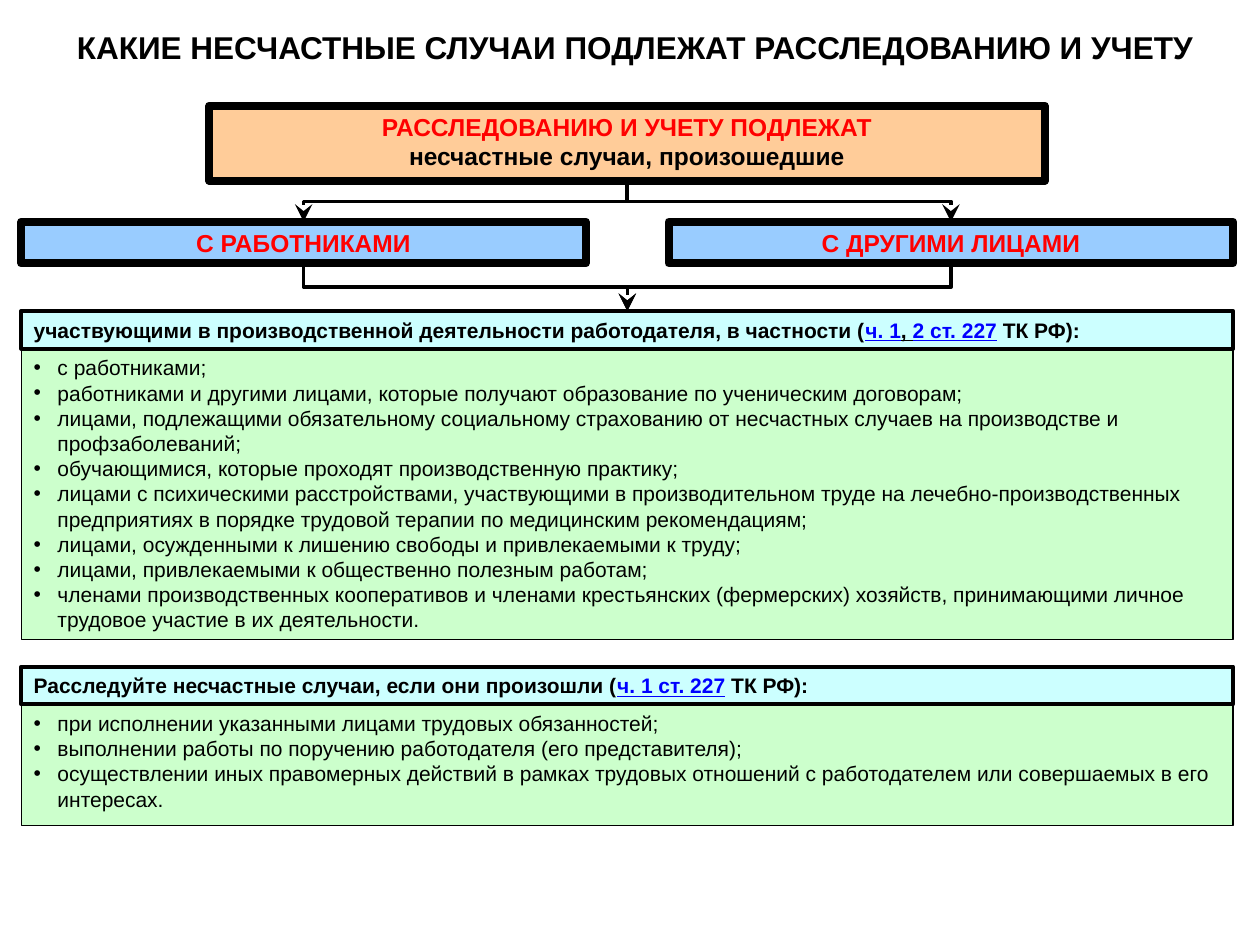
"""Builds a slide on which workplace accidents must be investigated and recorded."""
from lxml.etree import SubElement
from pptx import Presentation
from pptx.dml.color import RGBColor
from pptx.enum.shapes import MSO_CONNECTOR, MSO_SHAPE
from pptx.enum.text import MSO_ANCHOR, PP_ALIGN
from pptx.oxml.ns import qn
from pptx.util import Cm, Pt

COLORS = {
    "black": "000000", "red": "FF0000", "link": "0000FF",
    "orange": "FFCC99", "blue": "99CCFF", "cyan": "CCFFFF", "green": "CCFFCC",
}
TITLE = "КАКИЕ НЕСЧАСТНЫЕ СЛУЧАИ ПОДЛЕЖАТ РАССЛЕДОВАНИЮ И УЧЕТУ"
SUBJECT = [
    [("РАССЛЕДОВАНИЮ И УЧЕТУ ПОДЛЕЖАТ", "red")],
    [("несчастные случаи, произошедшие", "black")],
]
GROUPS = ["С РАБОТНИКАМИ", "С ДРУГИМИ ЛИЦАМИ"]
PANELS = [
    {
        "top": 6.27, "body_height": 5.87,
        "heading": [
            ("участвующими в производственной деятельности работодателя, в частности (", "black"),
            ("ч. 1", "link"), (", ", "underlined"), ("2 ст. 227", "link"), (" ТК РФ):", "black"),
        ],
        "items": [
            "с работниками;",
            "работниками и другими лицами, которые получают образование по ученическим договорам;",
            "лицами, подлежащими обязательному социальному страхованию от несчастных случаев на производстве и профзаболеваний;",
            "обучающимися, которые проходят производственную практику;",
            "лицами с психическими расстройствами, участвующими в производительном труде на лечебно-производственных предприятиях в порядке трудовой терапии по медицинским рекомендациям;",
            "лицами, осужденными к лишению свободы и привлекаемыми к труду;",
            "лицами, привлекаемыми к общественно полезным работам;",
            "членами производственных кооперативов и членами крестьянских (фермерских) хозяйств, принимающими личное трудовое участие в их деятельности.",
        ],
    },
    {
        "top": 13.44, "body_height": 2.44,
        "heading": [
            ("Расследуйте несчастные случаи, если они произошли (", "black"),
            ("ч. 1 ст. 227", "link"), (" ТК РФ):", "black"),
        ],
        "items": [
            "при исполнении указанными лицами трудовых обязанностей;",
            "выполнении работы по поручению работодателя (его представителя);",
            "осуществлении иных правомерных действий в рамках трудовых отношений с работодателем или совершаемых в его интересах.",
        ],
    },
]
LEFT, WIDTH, HEADING_HEIGHT = 0.43, 24.43, 0.76
GROUP_WIDTH, GROUP_TOP, GROUP_HEIGHT = 11.38, 4.47, 0.84
INDENT = Cm(0.48)


def color(name):
    return RGBColor.from_string(COLORS[name])


def write_text(shape, paragraphs, size=12, bold=False, align=PP_ALIGN.LEFT, bullet=None, wrap=True):
    frame = shape.text_frame
    frame.word_wrap = wrap
    frame.vertical_anchor = MSO_ANCHOR.TOP
    for index, parts in enumerate(paragraphs):
        paragraph = frame.add_paragraph() if index else frame.paragraphs[0]
        paragraph.alignment = align
        if bullet:
            properties = paragraph._p.get_or_add_pPr()
            properties.set("marL", str(INDENT))
            properties.set("indent", str(-INDENT))
            SubElement(properties, qn("a:buFont"), typeface="Arial")
            SubElement(properties, qn("a:buChar"), char=bullet)
        for text, style in parts:
            run = paragraph.add_run()
            run.text = text
            font = run.font
            font.name, font.size, font.bold = "Arial", Pt(size), bold
            font.underline = style in ("link", "underlined")
            font.color.rgb = color("black" if style == "underlined" else style)


def add_box(slide, left, top, width, height, fill, line_width):
    shape = slide.shapes.add_shape(MSO_SHAPE.RECTANGLE, Cm(left), Cm(top), Cm(width), Cm(height))
    shape.shadow.inherit = False
    shape.fill.solid()
    shape.fill.fore_color.rgb = color(fill)
    shape.line.color.rgb = color("black")
    shape.line.width = Pt(line_width)
    return shape


def add_elbow_arrow(slide, upper, lower):
    connector = slide.shapes.add_connector(MSO_CONNECTOR.ELBOW, 0, 0, 0, 0)
    connector.begin_connect(upper, 2)
    connector.end_connect(lower, 0)
    start_x, start_y = connector.begin_x, connector.begin_y
    end_x, end_y = connector.end_x, connector.end_y
    across, down = abs(end_x - start_x), end_y - start_y
    connector.left = (start_x + end_x - down) // 2
    connector.top = (start_y + end_y - across) // 2
    connector.width, connector.height = down, across
    goes_right = end_x > start_x
    transform = connector._element.spPr.find(qn("a:xfrm"))
    transform.set("rot", str((270 if goes_right else 90) * 60000))
    transform.set("flipH", "1" if goes_right else "0")
    transform.set("flipV", "0")
    connector.line.color.rgb = color("black")
    connector.line.width = Pt(2)
    line = connector.line._get_or_add_ln()
    SubElement(line, qn("a:tailEnd"), type="stealth", w="lg", len="lg")
    SubElement(connector._element.spPr, qn("a:effectLst"))


def main():
    presentation = Presentation()
    presentation.slide_width, presentation.slide_height = Cm(25.4), Cm(19.05)
    slide = presentation.slides.add_slide(presentation.slide_layouts[6])

    title = slide.shapes.add_textbox(Cm(1.17), Cm(0.38), Cm(23.27), Cm(1.8))
    title.text_frame.margin_top = Cm(0.18)
    write_text(title, [[(TITLE, "black")]], size=18, bold=True, align=PP_ALIGN.CENTER, wrap=False)

    subject = add_box(slide, 4.22, 2.13, 16.84, 1.52, "orange", 4.5)
    write_text(subject, SUBJECT, size=14, bold=True, align=PP_ALIGN.CENTER)

    groups = []
    for index, name in enumerate(GROUPS):
        left = LEFT + index * (WIDTH - GROUP_WIDTH)
        group = add_box(slide, left, GROUP_TOP, GROUP_WIDTH, GROUP_HEIGHT, "blue", 4.5)
        write_text(group, [[(name, "red")]], size=14, bold=True, align=PP_ALIGN.CENTER)
        groups.append(group)

    headings = []
    for panel in PANELS:
        top = panel["top"]
        body = add_box(slide, LEFT, top + HEADING_HEIGHT, WIDTH, panel["body_height"], "green", 0.75)
        write_text(body, [[(item, "black")] for item in panel["items"]], bullet="•")
        heading = add_box(slide, LEFT, top, WIDTH, HEADING_HEIGHT, "cyan", 2.25)
        write_text(heading, [panel["heading"]], bold=True)
        headings.append(heading)

    for group in groups:
        add_elbow_arrow(slide, subject, group)
        add_elbow_arrow(slide, group, headings[0])

    presentation.save("out.pptx")


if __name__ == "__main__":
    main()
